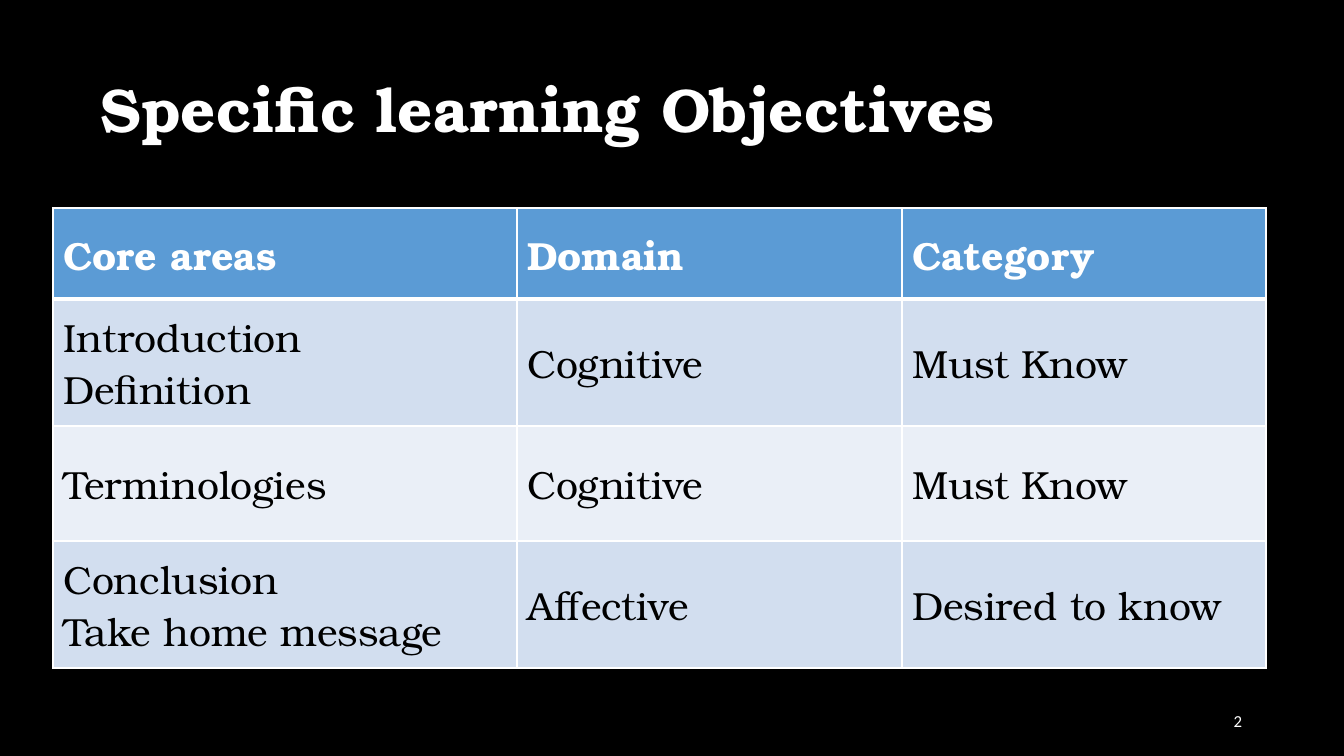
"""Build the slide of specific learning objectives."""
import pptx
import pptx.util
import pptx.dml.color
import pptx.enum.text
import pptx.oxml

PX = 914400 / 100.8
SERIF = "TeX Gyre Bonum"
WHITE = pptx.dml.color.RGBColor(0xFF, 0xFF, 0xFF)
BLACK = pptx.dml.color.RGBColor(0x00, 0x00, 0x00)
BLUE = pptx.dml.color.RGBColor(0x5B, 0x9B, 0xD5)
PALE = pptx.dml.color.RGBColor(0xD2, 0xDE, 0xEF)
LIGHT = pptx.dml.color.RGBColor(0xEA, 0xEF, 0xF7)
MIDDLE = pptx.enum.text.MSO_ANCHOR.MIDDLE
LEFT = pptx.enum.text.PP_ALIGN.LEFT
RIGHT = pptx.enum.text.PP_ALIGN.RIGHT
SPACE = "http://schemas.openxmlformats.org/drawingml/2006/main"


def scale(*sizes):
    return [pptx.util.Emu(round(size * PX)) for size in sizes]


def style(frame, face, size, color, bold):
    for para in frame.paragraphs:
        for run in para.runs:
            run.font.name = face
            run.font.size = pptx.util.Pt(size)
            run.font.color.rgb = color
            run.font.bold = bold


deck = pptx.Presentation()
deck.slide_width, deck.slide_height = scale(1344, 756)
slide = deck.slides.add_slide(deck.slide_layouts[6])
slide.background.fill.solid()
slide.background.fill.fore_color.rgb = BLACK

labels = [
    ("Specific learning Objectives", (91, 72, 1175, 82), SERIF, 44, True, LEFT, 0.9),
    ("2", (950, 701, 302, 40), "Calibri", 12, False, RIGHT, 1.0),
]
for text, place, face, size, bold, align, spacing in labels:
    frame = slide.shapes.add_textbox(*scale(*place)).text_frame
    frame.word_wrap = True
    frame.vertical_anchor = MIDDLE
    frame.text = text
    frame.paragraphs[0].alignment = align
    frame.paragraphs[0].line_spacing = spacing
    style(frame, face, size, WHITE, bold)

rows = [
    ("Core areas", "Domain", "Category"),
    ("Introduction\nDefinition", "Cognitive", "Must Know"),
    ("Terminologies", "Cognitive", "Must Know"),
    ("Conclusion\nTake home message", "Affective", "Desired to know"),
]
widths = scale(464, 385, 364)
heights = scale(91, 127, 115, 127)
fills = [BLUE, PALE, LIGHT, PALE]
grid = slide.shapes.add_table(
    len(rows), len(widths), *scale(53, 208), sum(widths), sum(heights)
).table
for column, width in zip(grid.columns, widths):
    column.width = width

for i, texts in enumerate(rows):
    grid.rows[i].height = heights[i]
    head = i == 0
    for j, text in enumerate(texts):
        cell = grid.cell(i, j)
        cell.text_frame.text = text
        cell.vertical_anchor = MIDDLE
        style(cell.text_frame, SERIF, 28, WHITE if head else BLACK, head)
        props = cell._tc.get_or_add_tcPr()
        for side in "LRTB":
            thick = (i, side) in [(0, "B"), (1, "T")]
            width = pptx.util.Pt(3 if thick else 1)
            props.append(pptx.oxml.parse_xml(
                f'<a:ln{side} xmlns:a="{SPACE}" w="{width}"><a:solidFill>'
                f'<a:srgbClr val="{WHITE}"/></a:solidFill></a:ln{side}>'
            ))
        cell.fill.solid()
        cell.fill.fore_color.rgb = fills[i]

deck.save("out.pptx")
